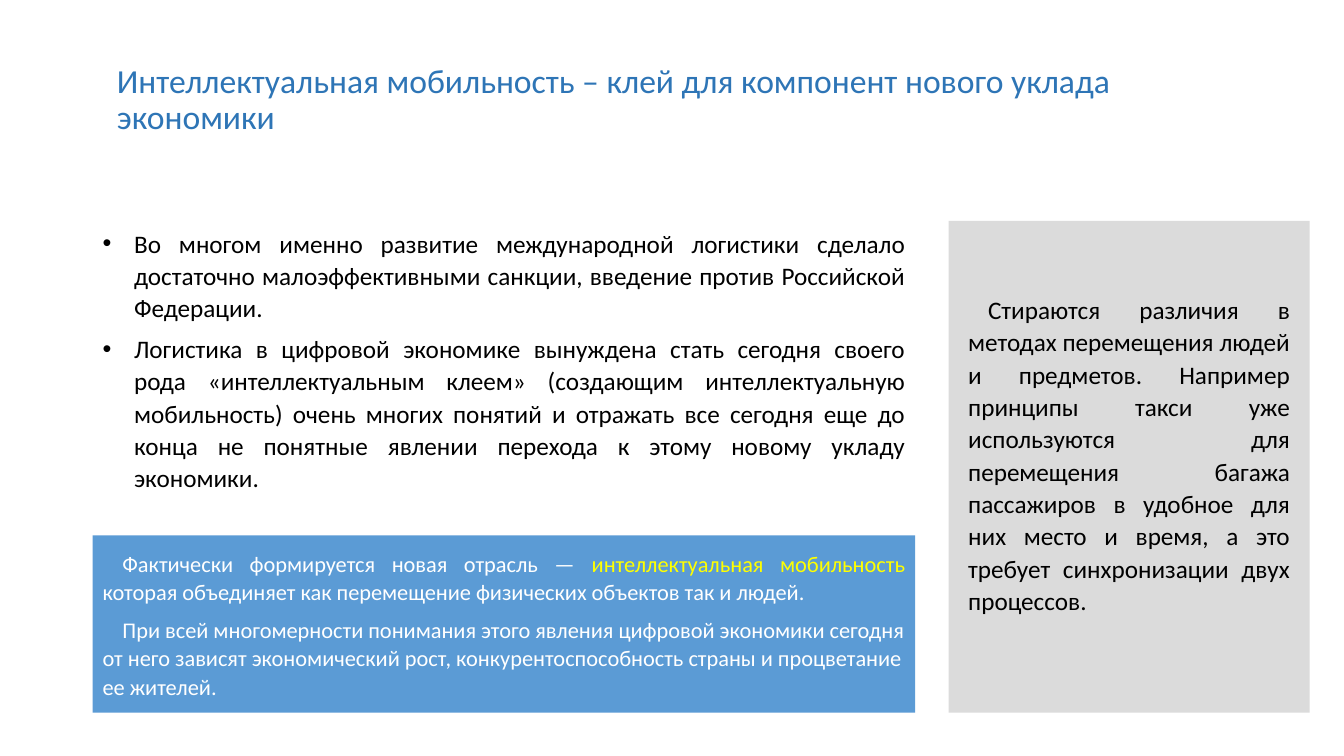
"""Build the slide on intellectual mobility as the glue of the new economy."""
from dataclasses import dataclass
from typing import Optional

from lxml import etree
from pptx import Presentation
from pptx import util as u
from pptx.dml.color import RGBColor
from pptx.enum import shapes, text
from pptx.oxml import ns


@dataclass(frozen=True)
class Theme:
    font: str = "Calibri"
    title_size: float = 24
    body_size: float = 18
    callout_size: float = 16
    title: str = "2E75B6"
    body: str = "000000"
    sidebar: str = "DBDBDB"
    callout: str = "5B9BD5"
    callout_text: str = "FFFFFF"
    highlight: str = "FFFF00"


THEME = Theme()


@dataclass(frozen=True)
class Area:
    left: float
    top: float
    width: float
    height: float

    def lengths(self) -> tuple:
        return tuple(u.Pt(v) for v in (self.left, self.top, self.width, self.height))


@dataclass(frozen=True)
class Passage:
    pieces: tuple
    justified: bool = True
    bulleted: bool = False


@dataclass(frozen=True)
class Panel:
    area: Area
    passages: tuple = ()
    size: float = THEME.body_size
    color: str = THEME.body
    fill: Optional[str] = None


COLUMN_LEFT, COLUMN_WIDTH = 66.2, 587.6
PANEL_TOP, PANEL_BOTTOM, CALLOUT_TOP = 157.8, 509, 382.4
BULLET_INDENT, FIRST_LINE_INDENT = 22.5, 14.2

TITLE = "Интеллектуальная мобильность – клей для компонент нового уклада экономики"
TITLE_AREA = Area(76.3, 41.8, 746, 59.8)

PANELS = (
    Panel(Area(677.6, PANEL_TOP, 257.8, PANEL_BOTTOM - PANEL_TOP), fill=THEME.sidebar),
    Panel(
        Area(COLUMN_LEFT, PANEL_TOP, COLUMN_WIDTH, 200),
        (
            Passage((
                "Во многом именно развитие международной логистики сделало достаточно "
                "малоэффективными санкции, введение против Российской Федерации.",
            ), bulleted=True),
            Passage((
                "Логистика в цифровой экономике вынуждена стать сегодня своего рода "
                "«интеллектуальным клеем» (создающим интеллектуальную мобильность) очень "
                "многих понятий и отражать все сегодня еще до конца не понятные явлении "
                "перехода к этому новому укладу экономики.",
            ), bulleted=True),
        ),
    ),
    Panel(
        Area(684.5, 205.2, 244, 240),
        (
            Passage((
                "Стираются различия в методах перемещения людей и предметов. Например "
                "принципы такси уже используются для перемещения багажа пассажиров в удобное "
                "для них место и время, а это требует синхронизации двух процессов.",
            )),
        ),
    ),
    Panel(
        Area(COLUMN_LEFT, CALLOUT_TOP, COLUMN_WIDTH, PANEL_BOTTOM - CALLOUT_TOP),
        (
            Passage((
                "Фактически формируется новая отрасль — ",
                ("интеллектуальная мобильность ", THEME.highlight),
                "которая объединяет как перемещение физических объектов так и людей.",
            )),
            Passage((
                "При всей многомерности понимания этого явления цифровой экономики сегодня "
                "от него зависят экономический рост, конкурентоспособность страны и "
                "процветание ее жителей.",
            ), justified=False),
        ),
        THEME.callout_size, THEME.callout_text, THEME.callout,
    ),
)


def style_run(run, size: float, color: str) -> None:
    run.font.name = THEME.font
    run.font.size = u.Pt(size)
    run.font.color.rgb = RGBColor.from_string(color)


def write_passage(paragraph, passage: Passage, panel: Panel) -> None:
    properties = paragraph._p.get_or_add_pPr()
    if passage.bulleted:
        properties.set("marL", str(u.Pt(BULLET_INDENT)))
        properties.set("indent", str(-u.Pt(BULLET_INDENT)))
        etree.SubElement(properties, ns.qn("a:buFont"), typeface="Arial")
        etree.SubElement(properties, ns.qn("a:buChar"), char="•")
    else:
        properties.set("marL", "0")
        properties.set("indent", str(u.Pt(FIRST_LINE_INDENT)))
        etree.SubElement(properties, ns.qn("a:buNone"))
    paragraph.alignment = text.PP_ALIGN.JUSTIFY if passage.justified else text.PP_ALIGN.LEFT
    paragraph.line_spacing = 1.07
    paragraph.space_after = u.Pt(6)
    for piece in passage.pieces:
        wording, color = (piece, panel.color) if isinstance(piece, str) else piece
        run = paragraph.add_run()
        run.text = wording
        style_run(run, panel.size, color)


def draw_panel(slide, panel: Panel) -> None:
    if panel.fill:
        holder = slide.shapes.add_shape(shapes.MSO_SHAPE.RECTANGLE, *panel.area.lengths())
        holder.shadow.inherit = False
        holder.fill.solid()
        holder.fill.fore_color.rgb = RGBColor.from_string(panel.fill)
        holder.line.fill.background()
    else:
        holder = slide.shapes.add_textbox(*panel.area.lengths())
    frame = holder.text_frame
    frame.word_wrap = True
    frame.vertical_anchor = text.MSO_ANCHOR.MIDDLE if panel.fill else text.MSO_ANCHOR.TOP
    for index, passage in enumerate(panel.passages):
        paragraph = frame.add_paragraph() if index else frame.paragraphs[0]
        write_passage(paragraph, passage, panel)


def write_title(slide) -> None:
    heading = slide.shapes.title
    heading.left, heading.top, heading.width, heading.height = TITLE_AREA.lengths()
    frame = heading.text_frame
    frame.text = TITLE
    frame.word_wrap = True
    frame.auto_size = text.MSO_AUTO_SIZE.NONE
    frame.vertical_anchor = text.MSO_ANCHOR.MIDDLE
    paragraph = frame.paragraphs[0]
    paragraph.alignment = text.PP_ALIGN.LEFT
    paragraph.line_spacing = 0.9
    style_run(paragraph.runs[0], THEME.title_size, THEME.title)


def main() -> None:
    presentation = Presentation()
    presentation.slide_width, presentation.slide_height = u.Pt(960), u.Pt(540)
    slide = presentation.slides.add_slide(presentation.slide_layouts[5])
    write_title(slide)
    for panel in PANELS:
        draw_panel(slide, panel)
    presentation.save("out.pptx")


if __name__ == "__main__":
    main()
